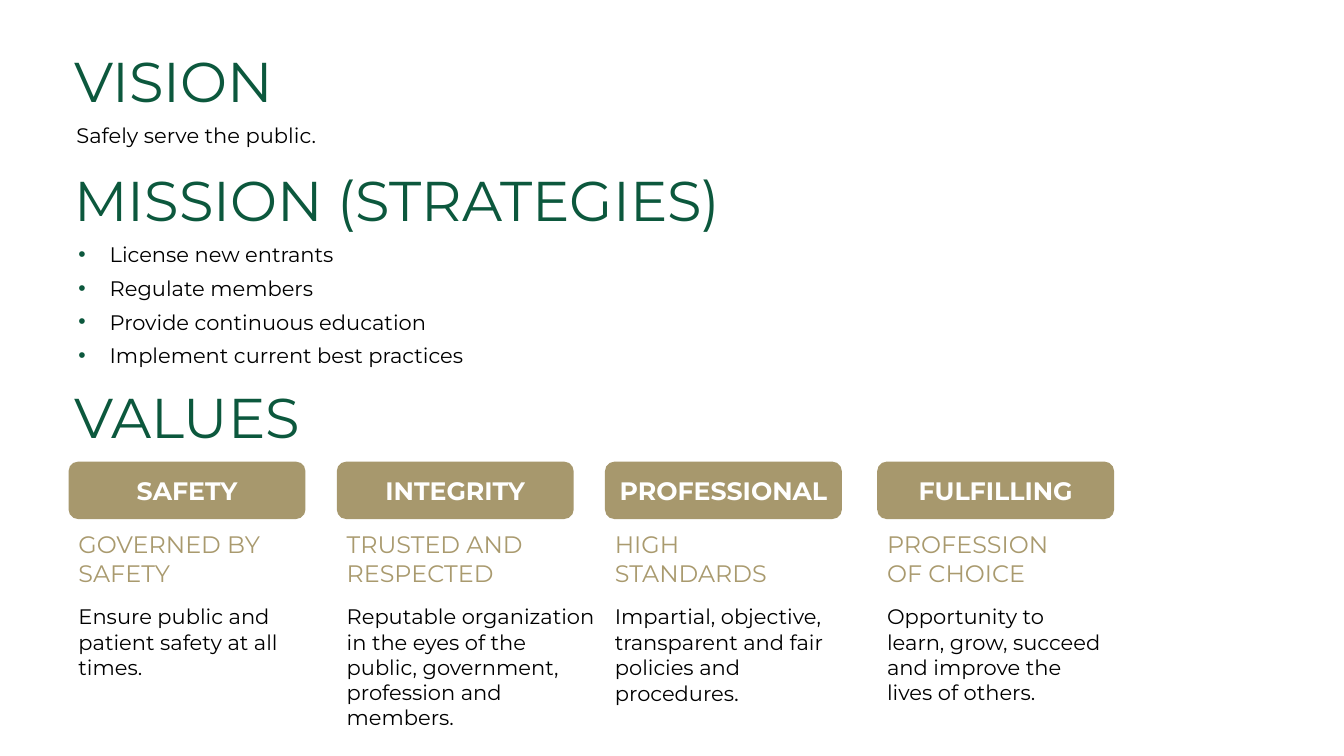
from dataclasses import dataclass

from lxml.etree import SubElement
from pptx import Presentation
from pptx.dml.color import RGBColor
from pptx.enum.shapes import MSO_SHAPE
from pptx.enum.text import MSO_ANCHOR, PP_ALIGN
from pptx.oxml.ns import qn
from pptx.util import Inches, Pt


@dataclass(frozen=True)
class Theme:
    font: str = "Montserrat"
    green: str = "0C583D"
    gold_fill: str = "A7986D"
    gold_text: str = "A99A6E"
    black: str = "000000"
    white: str = "FFFFFF"
    title_size: int = 40
    label_size: int = 18
    subhead_size: int = 17
    period_size: int = 16
    body_size: int = 15


THEME = Theme()
LEFT = 0.64
CARD_WIDTH = 2.35
LABEL_TOP, LABEL_HEIGHT = 4.58, 0.57
CARD_TOP, CARD_HEIGHT = 5.21, 1.9

# Section titles: text, top, width
SECTIONS = [
    ("VISION", 0.35, 3.2),
    ("MISSION (STRATEGIES)", 1.53, 7.18),
    ("VALUES", 3.68, 5.62),
]
STRATEGIES = [
    "License new entrants",
    "Regulate members",
    "Provide continuous education",
    "Implement current best practices",
]
# Values: left, text width, label, subheading lines, body text, larger ending
VALUES = [
    (0.68, CARD_WIDTH, "SAFETY", ["GOVERNED BY SAFETY"],
     "Ensure public and patient safety at all times.", ""),
    (3.34, 2.66, "INTEGRITY", ["TRUSTED AND RESPECTED"],
     "Reputable organization in the eyes of the public, government, "
     "profession and members.", ""),
    (6, CARD_WIDTH, "PROFESSIONAL", ["HIGH STANDARDS"],
     "Impartial, objective, transparent and fair policies and procedures", "."),
    (8.7, CARD_WIDTH, "FULFILLING", ["PROFESSION", "OF CHOICE"],
     "Opportunity to learn, grow, succeed and improve the lives of others.", ""),
]


def set_attributes(target, values):
    for name, value in values.items():
        setattr(target, name, value)


def add_run(paragraph, text, size, color, bold=False):
    run = paragraph.add_run()
    run.text = text
    set_attributes(run.font, {"name": THEME.font, "size": Pt(size), "bold": bold})
    run.font.color.rgb = RGBColor.from_string(color)


def add_text_frame(slide, left, top, width, height, anchor=MSO_ANCHOR.TOP):
    box = slide.shapes.add_textbox(
        Inches(left), Inches(top), Inches(width), Inches(height))
    set_attributes(box.text_frame, {"word_wrap": True, "vertical_anchor": anchor})
    return box.text_frame


def next_paragraph(frame, index):
    return frame.add_paragraph() if index else frame.paragraphs[0]


def add_bullet(paragraph):
    properties = paragraph._p.get_or_add_pPr()
    indent = Inches(0.31)
    properties.set("marL", str(indent))
    properties.set("indent", str(-indent))
    color = SubElement(properties, qn("a:buClr"))
    SubElement(color, qn("a:srgbClr"), val=THEME.green)
    SubElement(properties, qn("a:buFont"), typeface="Arial")
    SubElement(properties, qn("a:buChar"), char="•")


def add_section_title(slide, text, top, width):
    frame = add_text_frame(slide, LEFT, top, width, 0.84, MSO_ANCHOR.BOTTOM)
    paragraph = frame.paragraphs[0]
    paragraph.line_spacing = 0.9
    add_run(paragraph, text, THEME.title_size, THEME.green)


def add_bullet_list(slide, items):
    frame = add_text_frame(slide, 0.68, 2.35, 6.66, 1.36)
    for index, item in enumerate(items):
        paragraph = next_paragraph(frame, index)
        add_bullet(paragraph)
        paragraph.space_after = Pt(6)
        add_run(paragraph, item, THEME.body_size, THEME.black)


def add_value_label(slide, left, text):
    shape = slide.shapes.add_shape(
        MSO_SHAPE.ROUNDED_RECTANGLE, Inches(left), Inches(LABEL_TOP),
        Inches(CARD_WIDTH), Inches(LABEL_HEIGHT))
    shape.shadow.inherit = False
    shape.fill.solid()
    shape.fill.fore_color.rgb = RGBColor.from_string(THEME.gold_fill)
    shape.line.fill.background()
    set_attributes(shape.text_frame,
                   {"word_wrap": True, "vertical_anchor": MSO_ANCHOR.MIDDLE})
    paragraph = shape.text_frame.paragraphs[0]
    paragraph.alignment = PP_ALIGN.CENTER
    add_run(paragraph, text, THEME.label_size, THEME.white, bold=True)


def add_value_text(slide, left, width, subheads, body, ending):
    frame = add_text_frame(slide, left, CARD_TOP, width, CARD_HEIGHT)
    for index, subhead in enumerate(subheads):
        add_run(next_paragraph(frame, index), subhead,
                THEME.subhead_size, THEME.gold_text)
    paragraph = frame.add_paragraph()
    paragraph.space_before = Pt(12)
    add_run(paragraph, body, THEME.body_size, THEME.black)
    if ending:
        add_run(paragraph, ending, THEME.period_size, THEME.black)


def main():
    presentation = Presentation()
    set_attributes(presentation, {"slide_width": Inches(13.33),
                                  "slide_height": Inches(7.5)})
    slide = presentation.slides.add_slide(presentation.slide_layouts[6])

    # Section titles
    for text, top, width in SECTIONS:
        add_section_title(slide, text, top, width)

    # Vision and mission
    vision = add_text_frame(slide, 0.66, 1.17, 6.66, 0.35)
    add_run(vision.paragraphs[0], "Safely serve the public.",
            THEME.body_size, THEME.black)
    add_bullet_list(slide, STRATEGIES)

    # Values
    for left, width, label, subheads, body, ending in VALUES:
        add_value_label(slide, left, label)
        add_value_text(slide, left, width, subheads, body, ending)

    presentation.save("out.pptx")


if __name__ == "__main__":
    main()
